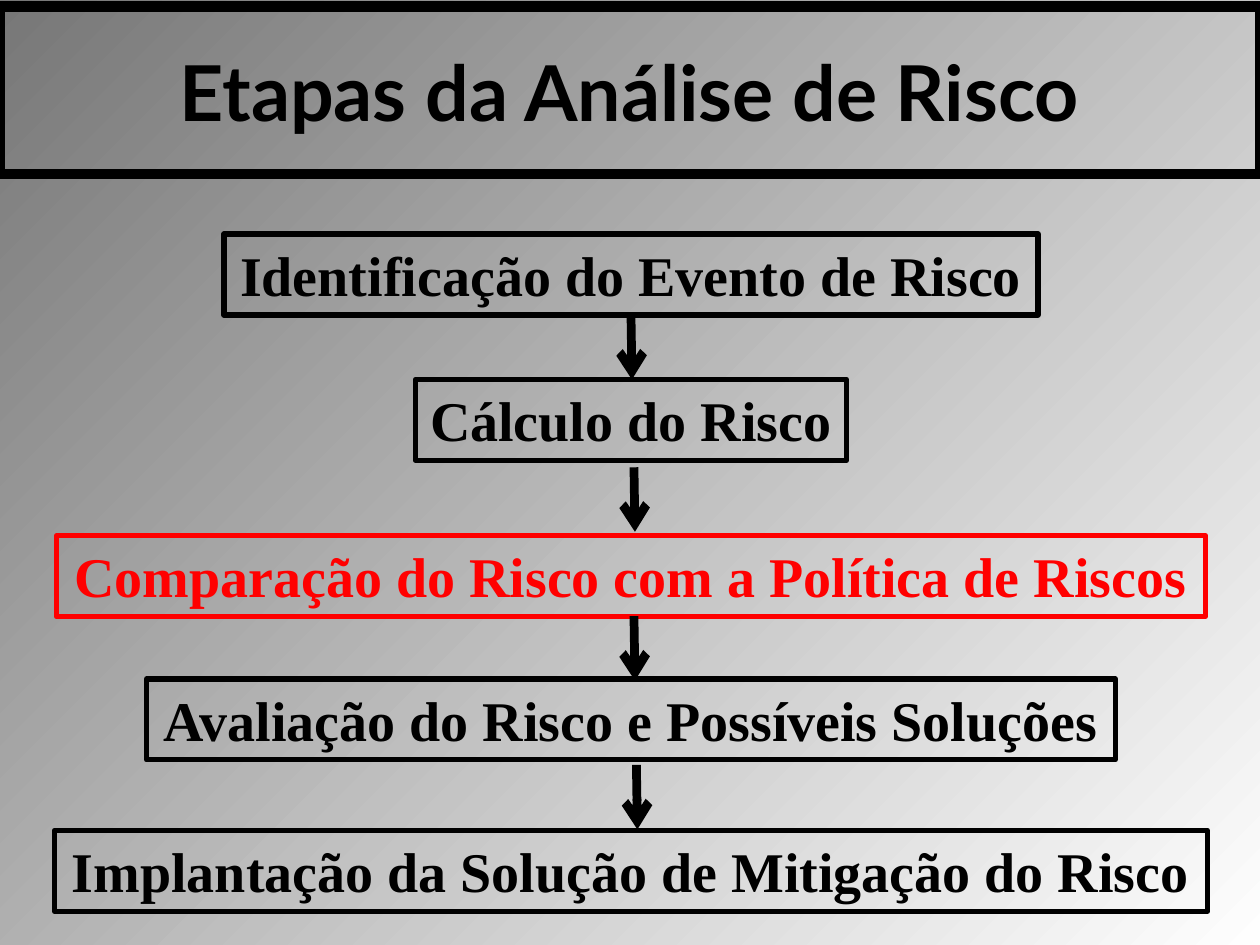
from lxml import etree
from pptx import Presentation
from pptx.dml.color import RGBColor
from pptx.enum.shapes import MSO_CONNECTOR, MSO_SHAPE
from pptx.enum.text import MSO_ANCHOR, PP_ALIGN
from pptx.oxml.ns import qn
from pptx.util import Cm, Pt

RECTANGLE = MSO_SHAPE.RECTANGLE
STRAIGHT = MSO_CONNECTOR.STRAIGHT
MIDDLE, TOP = MSO_ANCHOR.MIDDLE, MSO_ANCHOR.TOP
CENTER = PP_ALIGN.CENTER

COLORS = {"ink": "000000", "alert": "FF0000", "shade": "777777", "light": "FEFEFE"}
SLIDE_W, SLIDE_H = 25.4, 19.05
STEP_H, ARROW_H = 1.63, 1.3

STEPS = [
    ("Identificação do Evento de Risco", 0, 16.41, "ink"),
    ("Cálculo do Risco", 2.93, 8.69, "ink"),
    ("Comparação do Risco com a Política de Riscos", 6.08, 23.16, "alert"),
    ("Avaliação do Risco e Possíveis Soluções", 8.97, 19.53, "ink"),
    ("Implantação da Solução de Mitigação do Risco", 12.02, 23.24, "ink"),
]
ARROWS = [(0, 1.63), (0.06, 4.7), (0.06, 7.7), (0.11, 10.7)]


def rgb(name):
    return RGBColor.from_string(COLORS[name])


def paint_background(slide):
    fill = slide.background.fill
    fill.gradient()
    fill.gradient_angle = 315
    for stop, position, color in zip(fill.gradient_stops, (0, 1), ("shade", "light")):
        stop.position = position
        stop.color.rgb = rgb(color)


def add_frame(slide, box, text, font_name, size, color, border, anchor, wrap):
    frame = slide.shapes.add_shape(RECTANGLE, *(Cm(length) for length in box))
    frame.shadow.inherit = False
    frame.fill.background()
    frame.line.color.rgb = rgb(color)
    frame.line.width = Pt(border)
    content = frame.text_frame
    content.word_wrap = wrap
    content.vertical_anchor = anchor
    label = content.paragraphs[0]
    label.text = text
    label.alignment = CENTER
    label.font.name = font_name
    label.font.size = Pt(size)
    label.font.bold = True
    label.font.color.rgb = rgb(color)


def add_arrow(slide, x, y):
    arrow = slide.shapes.add_connector(
        STRAIGHT, Cm(x), Cm(y), Cm(x + 0.02), Cm(y + ARROW_H)
    )
    arrow.line.color.rgb = rgb("ink")
    arrow.line.width = Pt(5)
    etree.SubElement(arrow.line._get_or_add_ln(), qn("a:tailEnd"), type="arrow")
    etree.SubElement(arrow._element.spPr, qn("a:effectLst"))


def add_title(slide, box):
    add_frame(slide, box, "Etapas da Análise de Risco", "Lato", 44, "ink", 6, MIDDLE, True)


def add_flow(slide, left, top, width):
    center = left + width / 2
    for text, offset, step_w, color in STEPS:
        box = (center - step_w / 2, top + offset, step_w, STEP_H)
        add_frame(slide, box, text, "Times New Roman", 32, color, 3, TOP, False)
    for shift, offset in ARROWS:
        add_arrow(slide, center + shift, top + offset)


def main():
    deck = Presentation()
    deck.slide_width, deck.slide_height = Cm(SLIDE_W), Cm(SLIDE_H)
    slide = deck.slides.add_slide(deck.slide_layouts[6])
    paint_background(slide)
    add_title(slide, (0, 0.13, SLIDE_W, 3.38))
    add_flow(slide, 1.1, 4.72, 23.24)
    deck.save("out.pptx")


if __name__ == "__main__":
    main()
